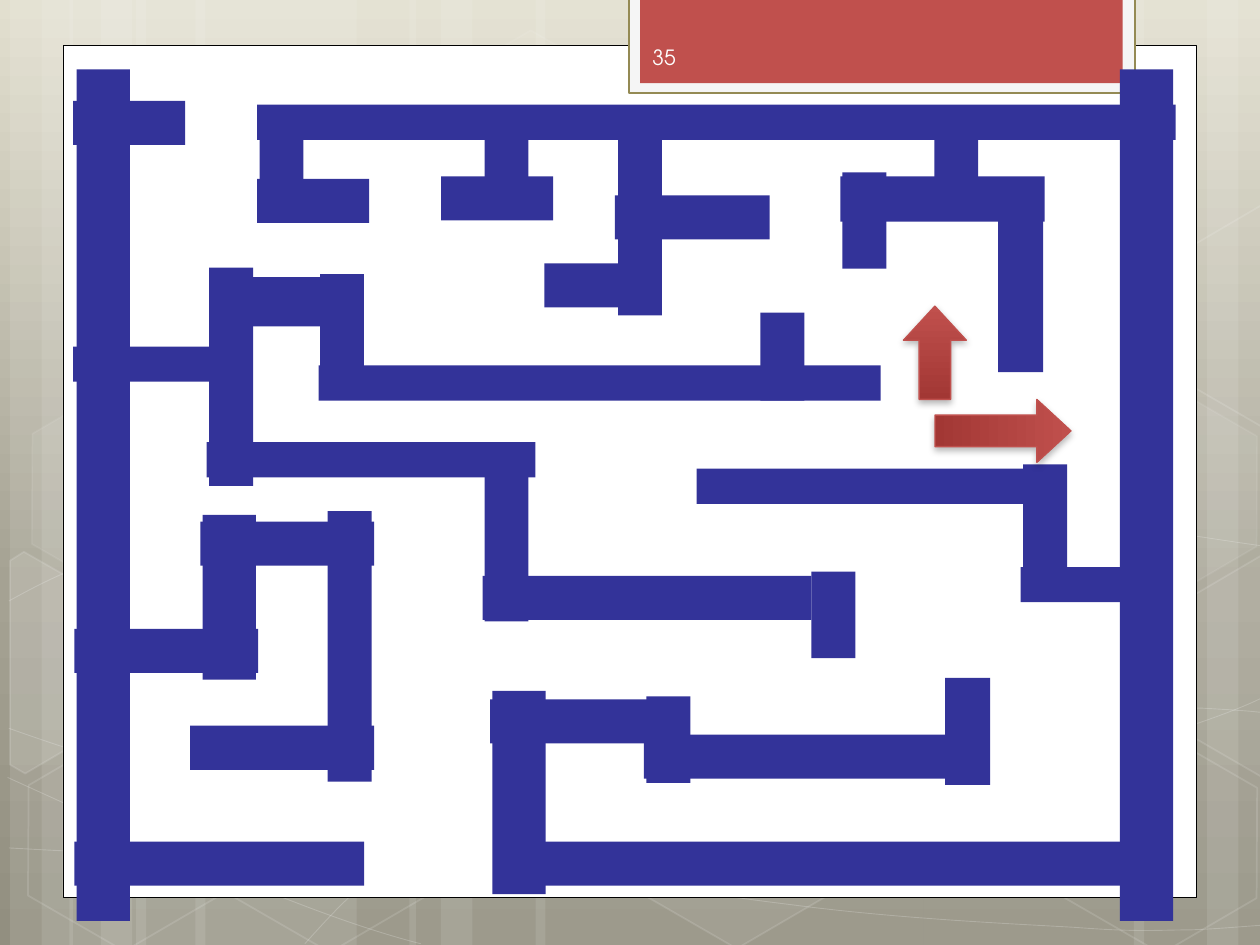
from copy import deepcopy

from lxml import etree
from pptx import Presentation
from pptx.dml.color import RGBColor
from pptx.enum.shapes import MSO_SHAPE
from pptx.enum.text import MSO_ANCHOR
from pptx.oxml.ns import qn
from pptx.util import Inches, Pt

RECTANGLE = MSO_SHAPE.RECTANGLE
HEXAGON = MSO_SHAPE.HEXAGON
UP_ARROW = MSO_SHAPE.UP_ARROW
MIDDLE = MSO_ANCHOR.MIDDLE

THEME = {
    "font": "TeX Gyre Adventor", "number_size": 12, "number": "FEFEFE",
    "white": "FFFFFF", "black": "000000", "wall": "333399",
    "tab": "C0504D", "tab_frame": "F5F5F5", "tab_border": "948A54",
    "background": [(0, "E2DFCF"), (0.62, "A5A293"), (1, "928F80")],
    "arrow": [(0, "C0504D"), (1, "A23734")],
}
PAGE_NUMBER = "35"
MAZE_STRETCH = 1.09

STRIPES = [
    (1.08, 1.75), (0.08, 0.5), (0.33, 0.83), (1.55, 1.75), (0.55, 0.5), (0.8, 0.83),
    (7.33, 1.75), (9.58, 0.5), (9, 0.83), (4.25, 3.08), (3.25, 0.5), (3.5, 0.83),
]
# start point, then cubic segments (two control points and an end point)
CURVES = [
    [(0.07, 6.73), (0.61, 6.76), (1.15, 6.79), (1.9, 6.78), (2.65, 6.77), (3.58, 6.75),
     (4.58, 6.65), (5.58, 6.55), (7, 6.36), (7.92, 6.17), (8.83, 5.98), (9.77, 5.68),
     (10.07, 5.51)],
    [(0.07, 4.77), (0.36, 4.61), (0.65, 4.46), (1.21, 4.31), (1.78, 4.16), (2.59, 3.94),
     (3.47, 3.87), (4.36, 3.8), (5.44, 3.79), (6.54, 3.87), (7.64, 3.95), (9.47, 4.26),
     (10.07, 4.34)],
    [(0.06, 6.17), (1.27, 6.72), (2.47, 7.27), (3.34, 7.49)],
    [(0.07, 5.78), (0.38, 5.89), (0.7, 6), (1.28, 6.16), (1.86, 6.31), (2.73, 6.56),
     (3.57, 6.73), (4.4, 6.9), (5.45, 7.08), (6.28, 7.18), (7.11, 7.29), (8, 7.33),
     (8.53, 7.36), (9.05, 7.4), (9.19, 7.38), (9.45, 7.38), (9.71, 7.37), (9.89, 7.35),
     (10.07, 7.34)],
    [(2.42, 7.49), (2.6, 7.29), (2.78, 7.09), (3.02, 6.91), (3.26, 6.73), (3.6, 6.53),
     (3.88, 6.39), (4.16, 6.25), (4.33, 6.19), (4.7, 6.09), (5.06, 5.99), (5.73, 5.85),
     (6.08, 5.78), (6.44, 5.71), (6.49, 5.71), (6.8, 5.69), (7.11, 5.66), (7.6, 5.63),
     (7.94, 5.62), (8.29, 5.61), (8.86, 5.62), (8.86, 5.62), (9.08, 5.62), (9.31, 5.62),
     (9.53, 5.62), (9.71, 5.63), (9.88, 5.64), (9.97, 5.65), (10.06, 5.66), (10.03, 5.65),
     (10.06, 5.66)],
]
HEXAGONS = [  # left, top, fill opacity, line opacity
    (3.34, 0.36, 4, 8), (4.97, 5.89, 6, 12), (0.11, 5.91, None, 12),
    (0.14, 3.12, 7, 8), (1.74, 5.92, None, 12), (7.53, 4.53, 10, 12),
    (8.34, 5.93, None, 12), (8.34, 3.14, 7, 8),
]
CUT_HEXAGONS = [  # corners, fill opacity
    ([(0.08, 4.45), (0.19, 4.38), (0.96, 4.82), (0.95, 5.7), (0.2, 6.14), (0.08, 6.07)], 10),
    ([(9.26, 4.85), (10.01, 4.41), (10.09, 4.46), (10.09, 6.13), (10.02, 6.17),
      (9.26, 5.73)], 4),
    ([(9.26, 2.07), (10.01, 1.63), (10.1, 1.68), (10.09, 3.35), (10.02, 3.39),
      (9.26, 2.95)], None),
]
HORIZONTAL_WALLS = [  # left, top, length, thickness
    (0.59, 6.68, 2.3, 0.35), (3.83, 4.57, 2.61, 0.35), (0.59, 4.99, 1.46, 0.35),
    (2.53, 2.9, 4.46, 0.28), (5.53, 3.72, 2.76, 0.28), (2.04, 0.83, 7.29, 0.28),
    (1.59, 4.14, 1.38, 0.35), (1.74, 2.2, 1.12, 0.39), (6.67, 1.4, 1.62, 0.36),
    (0.58, 2.75, 1.38, 0.28), (1.51, 5.76, 1.46, 0.35), (3.89, 5.55, 1.53, 0.35),
    (4.12, 6.68, 5.14, 0.35), (4.32, 2.09, 0.89, 0.35), (1.64, 3.51, 2.61, 0.28),
    (8.1, 4.5, 1.15, 0.28), (5.11, 5.83, 2.61, 0.35), (4.88, 1.55, 1.23, 0.35),
    (3.5, 1.4, 0.89, 0.35), (2.04, 1.42, 0.89, 0.35), (0.58, 0.8, 0.89, 0.35),
]
VERTICAL_WALLS = [  # frame before the quarter turn
    (6.3, 4.69, 0.63, 0.38), (7.29, 5.61, 0.78, 0.39), (6.51, 1.56, 0.7, 0.38),
    (6, 3.7, 6.2, 0.46), (2.27, 2.47, 0.89, 0.38), (1.04, 2.8, 1.59, 0.38),
    (-2.28, 3.7, 6.2, 0.46), (3.44, 4.11, 1.16, 0.38), (1.79, 4.94, 1.97, 0.38),
    (1.22, 4.51, 1.2, 0.46), (1.92, 1.07, 0.63, 0.38), (3.38, 6.06, 1.48, 0.46),
    (7.29, 1.06, 0.6, 0.38), (7.46, 2.06, 1.28, 0.39), (4.99, 5.68, 0.63, 0.38),
    (7.84, 3.99, 0.91, 0.38), (5.89, 2.64, 0.64, 0.38), (4.37, 1.54, 1.42, 0.38),
    (3.72, 1.2, 0.6, 0.38),
]
ARROWS = [((7.71, 2.88, 0.5, 1.08), 90), ((7.17, 2.43, 0.5, 0.74), 0)]


def paint(fill, color, opacity=100):
    fill.solid()
    fill.fore_color.rgb = RGBColor.from_string(color)
    if opacity < 100:
        color_element = fill._xPr.find(qn("a:solidFill"))[0]
        etree.SubElement(color_element, qn("a:alpha"), val=str(opacity * 1000))


def paint_gradient(fill, stops):
    fill.gradient()
    fill.gradient_angle = 270
    first = fill.gradient_stops[0]._gs
    for _ in stops[2:]:
        first.addnext(deepcopy(first))
    for stop, (position, color) in zip(fill.gradient_stops, stops):
        stop.position = position
        stop.color.rgb = RGBColor.from_string(color)


def style(shape, fill=None, opacity=100, line=None, width=1, line_opacity=100):
    shape.shadow.inherit = False
    if fill and opacity:
        paint(shape.fill, fill, opacity)
    else:
        shape.fill.background()
    if line:
        paint(shape.line.fill, line, line_opacity)
        shape.line.width = Pt(width)
    else:
        shape.line.fill.background()


def add_preset(shapes, kind, box, rotation=0, adjustments=(), **look):
    shape = shapes.add_shape(kind, *map(Inches, box))
    shape.rotation = rotation
    for index, value in enumerate(adjustments):
        shape.adjustments[index] = value
    style(shape, **look)
    return shape


def add_outline(shapes, points, close, **look):
    corners = [(Inches(x), Inches(y)) for x, y in points]
    builder = shapes.build_freeform(*corners[0])
    builder.add_line_segments(corners[1:], close=close)
    shape = builder.convert_to_shape()
    style(shape, **look)
    return shape


def add_curve(shapes, points, **look):
    shape = add_outline(shapes, points, False, **look)
    outline = next(shape._element.iter(qn("a:path")))
    lines = outline.findall(qn("a:lnTo"))
    for start in range(0, len(lines), 3):
        cubic = etree.SubElement(outline, qn("a:cubicBezTo"))
        for line in lines[start:start + 3]:
            cubic.append(line[0])
            outline.remove(line)


def add_text(shapes, text, box, size, color, font):
    frame = shapes.add_textbox(*map(Inches, box)).text_frame
    frame.word_wrap = True
    frame.vertical_anchor = MIDDLE
    run = frame.paragraphs[0].add_run()
    run.text = text
    run.font.size = Pt(size)
    run.font.name = font
    run.font.color.rgb = RGBColor.from_string(color)


def add_arrow(shapes, box, rotation):
    arrow = add_preset(shapes, UP_ARROW, box, rotation, (0.5, 0.542),
                       line=THEME["tab"], width=0.75)
    paint_gradient(arrow.fill, THEME["arrow"])
    effects = arrow._element.spPr.find(qn("a:effectLst"))
    shadow = etree.SubElement(effects, qn("a:outerShdw"), blurRad=str(Pt(4)),
                              dist=str(Pt(2)), dir="5400000", rotWithShape="0")
    color = etree.SubElement(shadow, qn("a:srgbClr"), val=THEME["black"])
    etree.SubElement(color, qn("a:alpha"), val="28000")


def add_backdrop(shapes):
    white = THEME["white"]
    for left, width in STRIPES:
        add_preset(shapes, RECTANGLE, (left, 0, width, 7.5), fill=white, opacity=10)
    for curve in CURVES:
        add_curve(shapes, curve, line=white, width=0.5, line_opacity=20)
    for left, top, opacity, line_opacity in HEXAGONS:
        add_preset(shapes, HEXAGON, (left, top, 1.75, 1.52), 30, (0.285, 1.155),
                   fill=white, opacity=opacity, line=white, line_opacity=line_opacity)
    for corners, opacity in CUT_HEXAGONS:
        add_outline(shapes, corners, True, fill=white, opacity=opacity,
                    line=white, line_opacity=12)


def add_maze(shapes):
    maze = shapes.add_group_shape()
    for walls, rotation in ((HORIZONTAL_WALLS, 0), (VERTICAL_WALLS, 270)):
        for left, top, width, height in walls:
            box = (left, top / MAZE_STRETCH, width, height / MAZE_STRETCH)
            add_preset(maze.shapes, RECTANGLE, box, rotation, fill=THEME["wall"])
    maze.top = int(maze.top * MAZE_STRETCH)
    maze.height = int(maze.height * MAZE_STRETCH)


def main():
    """Build the maze slide."""
    presentation = Presentation()
    presentation.slide_width, presentation.slide_height = Inches(10), Inches(7.5)
    slide = presentation.slides.add_slide(presentation.slide_layouts[6])
    shapes = slide.shapes
    paint_gradient(slide.background.fill, THEME["background"])
    add_backdrop(shapes)
    add_preset(shapes, RECTANGLE, (0.5, 0.36, 9, 6.76), fill=THEME["white"],
               line=THEME["black"], width=0.5)
    add_preset(shapes, RECTANGLE, (4.99, -0.02, 4.02, 0.76), fill=THEME["tab_frame"],
               line=THEME["tab_border"], width=1.25)
    add_preset(shapes, RECTANGLE, (5.08, -0.02, 3.83, 0.68), fill=THEME["tab"])
    add_text(shapes, PAGE_NUMBER, (5.08, 0.25, 1.46, 0.4), size=THEME["number_size"],
             color=THEME["number"], font=THEME["font"])
    add_maze(shapes)
    for box, rotation in ARROWS:
        add_arrow(shapes, box, rotation)
    presentation.save("out.pptx")


if __name__ == "__main__":
    main()
